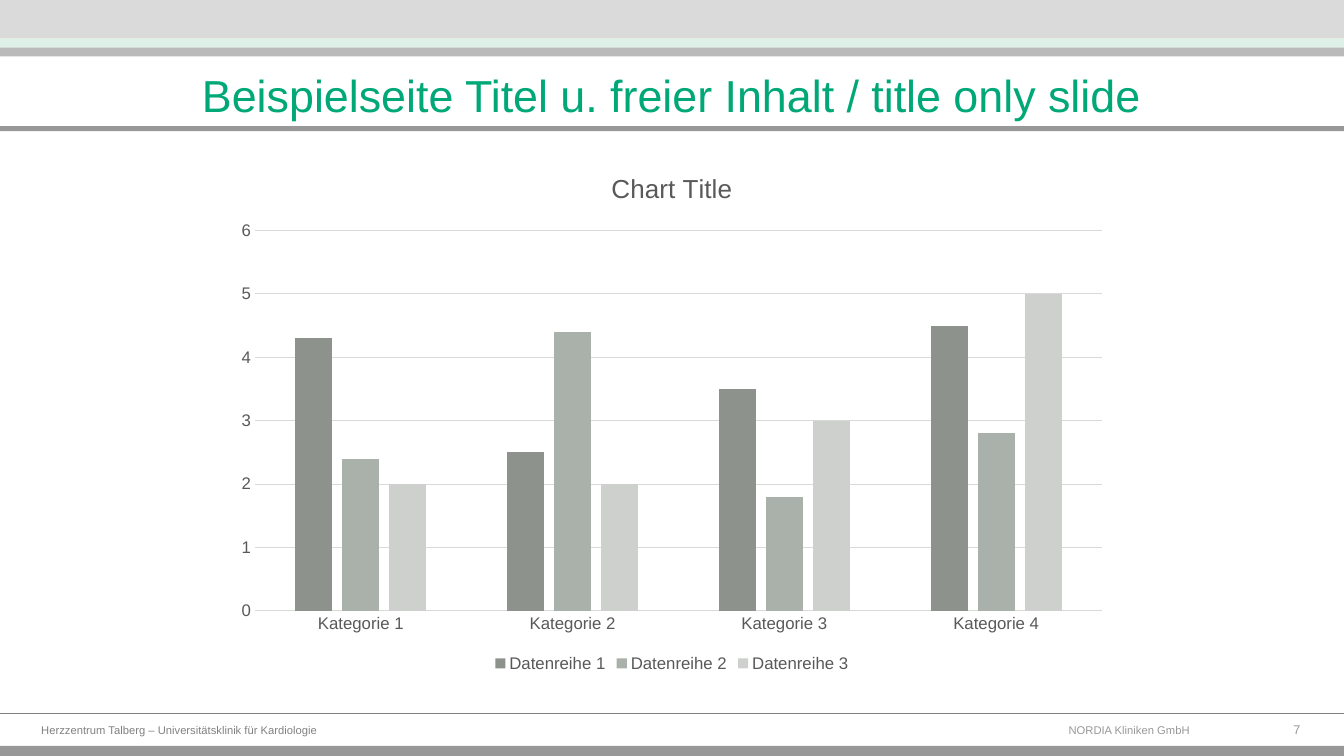
from dataclasses import dataclass

from lxml import etree
from pptx import Presentation
from pptx.chart.data import CategoryChartData
from pptx.dml.color import RGBColor
from pptx.enum.chart import XL_CHART_TYPE, XL_LEGEND_POSITION, XL_TICK_MARK
from pptx.enum.shapes import MSO_CONNECTOR, MSO_SHAPE
from pptx.enum.text import MSO_ANCHOR, PP_ALIGN
from pptx.oxml.ns import qn
from pptx.util import Emu, Inches, Pt

RECTANGLE = MSO_SHAPE.RECTANGLE
STRAIGHT = MSO_CONNECTOR.STRAIGHT
COLUMNS = XL_CHART_TYPE.COLUMN_CLUSTERED
LEGEND_BOTTOM = XL_LEGEND_POSITION.BOTTOM
NO_TICK = XL_TICK_MARK.NONE
TOP, MIDDLE, BOTTOM = MSO_ANCHOR.TOP, MSO_ANCHOR.MIDDLE, MSO_ANCHOR.BOTTOM
LEFT, CENTER, RIGHT = PP_ALIGN.LEFT, PP_ALIGN.CENTER, PP_ALIGN.RIGHT

WIDTH, HEIGHT = Inches(13.33), Inches(7.5)
FONT = "Arial"
GREY, CHART_TEXT, GRID_LINE = "989898", "595959", "D9D9D9"


@dataclass(frozen=True)
class Area:
    """A place on the page, in percent of its width and height."""
    left: float
    top: float
    width: float
    height: float

    def emu(self) -> tuple[Emu, Emu, Emu, Emu]:
        return (Emu(int(WIDTH * self.left / 100)), Emu(int(HEIGHT * self.top / 100)),
                Emu(int(WIDTH * self.width / 100)), Emu(int(HEIGHT * self.height / 100)))


@dataclass(frozen=True)
class Band:
    top: float
    height: float
    color: str


@dataclass(frozen=True)
class Label:
    text: str
    area: Area
    size: float
    color: str
    align: PP_ALIGN = LEFT
    anchor: MSO_ANCHOR = TOP
    wrap: bool = True


@dataclass(frozen=True)
class Series:
    name: str
    values: tuple[float, ...]
    color: str


BANDS = [
    Band(6.27, 1.2, "BABABA"),
    Band(5.07, 1.2, "DFF0E7"),
    Band(0, 5.07, "DADADA"),
    Band(98.67, 1.33, GREY),
    Band(16.67, 0.67, GREY),
]
FOOTER_RULE = Area(0, 94.4, 100, 0)
LABELS = [
    Label("7", Area(92.5, 94.8, 5, 3.33), 9, GREY, RIGHT, MIDDLE, False),
    Label("NORDIA Kliniken GmbH", Area(78.77, 95.07, 14.55, 3.47), 8, GREY),
    Label("Herzzentrum Talberg – Universitätsklinik für Kardiologie",
          Area(2.33, 94.8, 38.63, 3.33), 8, "818181", anchor=BOTTOM),
    Label("Beispielseite Titel u. freier Inhalt / title only slide",
          Area(3.53, 3.47, 92.95, 13.2), 32, "00A877", CENTER, BOTTOM),
]
CHART_AREA = Area(16.65, 19.87, 66.69, 69.6)
CATEGORIES = [f"Kategorie {number}" for number in range(1, 5)]
SERIES = [
    Series("Datenreihe 1", (4.3, 2.5, 3.5, 4.5), "8D928D"),
    Series("Datenreihe 2", (2.4, 4.4, 1.8, 2.8), "AAB0AA"),
    Series("Datenreihe 3", (2, 2, 3, 5), "CDD0CD"),
]


def paint(color_holder, color: str) -> None:
    """Give a fill or a line one solid colour."""
    if hasattr(color_holder, "solid"):
        color_holder.solid()
        color_holder.fore_color.rgb = RGBColor.from_string(color)
    else:
        color_holder.color.rgb = RGBColor.from_string(color)


def style_font(font, size: float, color: str) -> None:
    font.name = FONT
    font.size = Pt(size)
    font.bold = False
    paint(font.fill, color)


def style_line(line, color: str) -> None:
    paint(line, color)
    line.width = Pt(0.75)


def add_band(page, band: Band) -> None:
    bar = page.shapes.add_shape(RECTANGLE, *Area(0, band.top, 100, band.height).emu())
    bar.shadow.inherit = False
    paint(bar.fill, band.color)
    bar.line.fill.background()


def add_footer_rule(page) -> None:
    left, top, width, height = FOOTER_RULE.emu()
    rule = page.shapes.add_connector(STRAIGHT, left, top, left + width, top + height)
    style_line(rule.line, "808080")
    etree.SubElement(rule._element.spPr, qn("a:effectLst"))


def add_label(page, label: Label) -> None:
    box = page.shapes.add_textbox(*label.area.emu())
    frame = box.text_frame
    frame.word_wrap = label.wrap
    frame.vertical_anchor = label.anchor
    frame.text = label.text
    para = frame.paragraphs[0]
    para.alignment = label.align
    for span in para.runs:
        style_font(span.font, label.size, label.color)


def add_column_chart(page) -> None:
    data = CategoryChartData()
    data.categories = CATEGORIES
    for series in SERIES:
        data.add_series(series.name, series.values)
    chart = page.shapes.add_chart(COLUMNS, *CHART_AREA.emu(), data).chart
    style_font(chart.font, 10, "000000")

    # Title and legend
    chart.has_title = True
    title = chart.chart_title.text_frame
    title.text = "Chart Title"
    style_font(title.paragraphs[0].runs[0].font, 18.6, CHART_TEXT)
    chart.has_legend = True
    chart.legend.position = LEGEND_BOTTOM
    chart.legend.include_in_layout = False
    style_font(chart.legend.font, 12, CHART_TEXT)

    # Axes
    for axis in (chart.category_axis, chart.value_axis):
        axis.major_tick_mark = axis.minor_tick_mark = NO_TICK
        style_font(axis.tick_labels.font, 12, CHART_TEXT)
    style_line(chart.category_axis.format.line, GRID_LINE)
    values = chart.value_axis
    values.minimum_scale, values.maximum_scale, values.major_unit = 0, 6, 1
    values.format.line.fill.background()
    values.has_major_gridlines = True
    style_line(values.major_gridlines.format.line, GRID_LINE)

    # Columns
    plot = chart.plots[0]
    plot.gap_width, plot.overlap = 219, -27
    plot.vary_by_categories = False
    for drawn, series in zip(plot.series, SERIES):
        drawn.invert_if_negative = False
        paint(drawn.format.fill, series.color)


def main() -> None:
    deck = Presentation()
    deck.slide_width, deck.slide_height = WIDTH, HEIGHT
    page = deck.slides.add_slide(deck.slide_layouts[6])

    # Bands and rules, then text, then the chart
    for band in BANDS:
        add_band(page, band)
    add_footer_rule(page)
    for label in LABELS:
        add_label(page, label)
    add_column_chart(page)
    deck.save("out.pptx")


if __name__ == "__main__":
    main()
